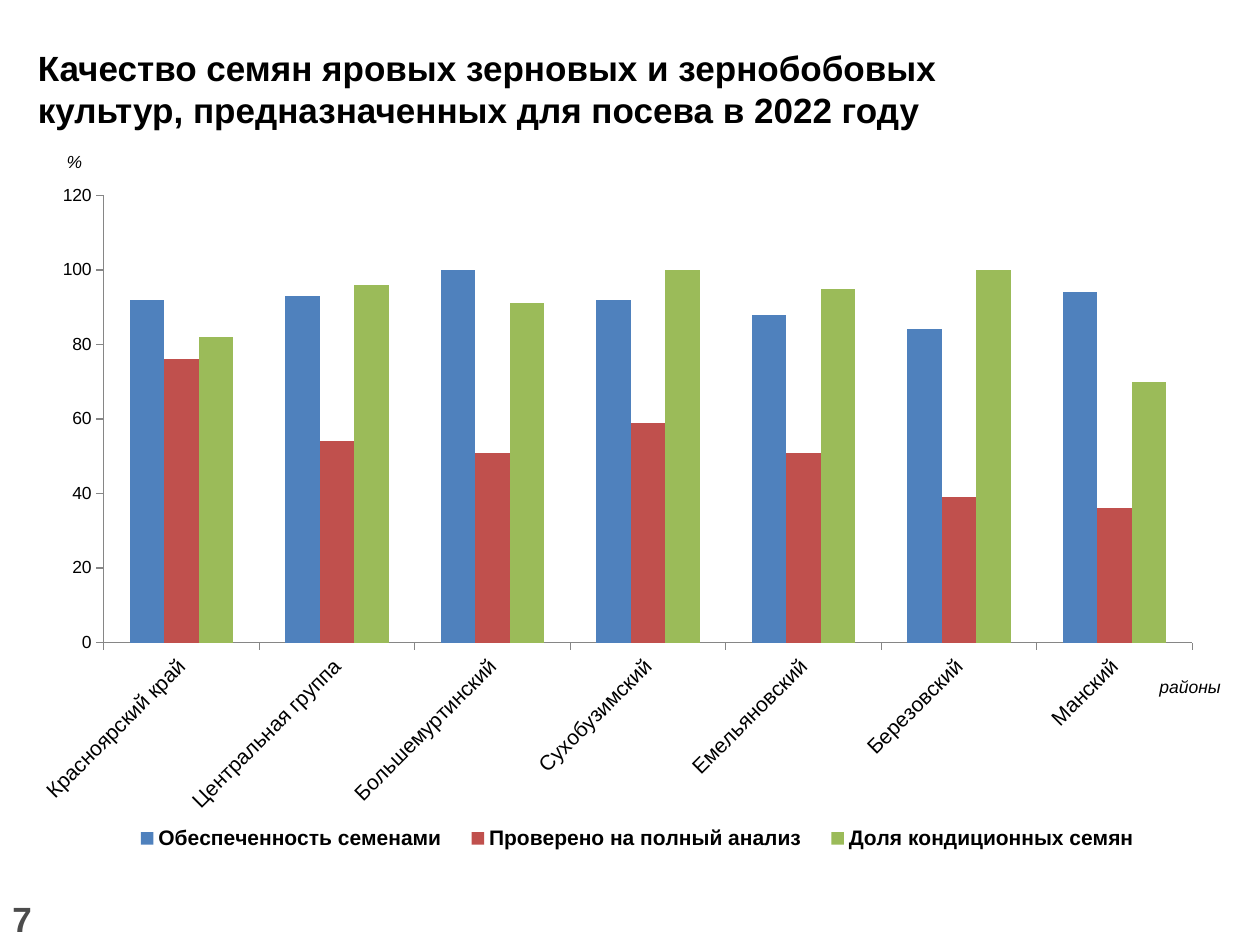
import pptx
import pptx.chart.data
import pptx.dml.color
import pptx.enum.chart
import pptx.enum.text
import pptx.oxml
import pptx.util
from pptx.util import Inches, Pt

RGBColor = pptx.dml.color.RGBColor
BLACK = RGBColor(0x00, 0x00, 0x00)
DARK_GRAY = RGBColor(0x4C, 0x4C, 0x4C)
AXIS_GRAY = RGBColor(0x86, 0x86, 0x86)
BLUE = RGBColor(0x4F, 0x81, 0xBD)
RED = RGBColor(0xC0, 0x50, 0x4D)
GREEN = RGBColor(0x9B, 0xBB, 0x59)
FONT = "Arial"

TITLE = ("Качество семян яровых зерновых и зернобобовых культур, "
         "предназначенных для посева в 2022 году")
DISTRICTS = ["Красноярский край", "Центральная группа", "Большемуртинский",
             "Сухобузимский", "Емельяновский", "Березовский", "Манский"]
SERIES = [
    ("Обеспеченность семенами", [92, 93, 100, 92, 88, 84, 94], BLUE),
    ("Проверено на полный анализ", [76, 54, 51, 59, 51, 39, 36], RED),
    ("Доля кондиционных семян", [82, 96, 91, 100, 95, 100, 70], GREEN),
]
PLOT_AREA = (0.058, 0.027, 0.922, 0.635)
LEGEND_AREA = (0.07, 0.91, 0.88, 0.06)

ALIGN = pptx.enum.text.PP_ALIGN
ANCHOR = pptx.enum.text.MSO_ANCHOR


def style_font(font, size, color=BLACK, bold=False, italic=False):
    font.name, font.size = FONT, Pt(size)
    font.bold, font.italic = bold, italic
    font.color.rgb = color


def write(shape, text, size, align=ALIGN.LEFT, anchor=ANCHOR.TOP, **style):
    frame = shape.text_frame
    frame.word_wrap = True
    frame.auto_size = pptx.enum.text.MSO_AUTO_SIZE.NONE
    frame.vertical_anchor = anchor
    frame.text = text
    paragraph = frame.paragraphs[0]
    paragraph.alignment = align
    paragraph.line_spacing = 1.0
    style_font(paragraph.font, size, **style)


def add_label(slide, area, text, size, **style):
    box = slide.shapes.add_textbox(*map(Inches, area))
    write(box, text, size, **style)


def manual_layout(area, inner=False):
    """Return a c:layout element holding fractions of the chart area."""
    target = '<c:layoutTarget val="inner"/>' if inner else ""
    modes = '<c:xMode val="edge"/><c:yMode val="edge"/>'
    sizes = "".join(f'<c:{key} val="{value}"/>' for key, value in zip("xywh", area))
    return pptx.oxml.parse_xml(
        '<c:layout xmlns:c="http://schemas.openxmlformats.org/drawingml/2006/chart">'
        f"<c:manualLayout>{target}{modes}{sizes}</c:manualLayout></c:layout>")


def set_layout(element, layout, index):
    for old in element.findall(layout.tag):
        element.remove(old)
    element.insert(index, layout)


def add_seed_chart(slide):
    data = pptx.chart.data.CategoryChartData()
    data.categories = DISTRICTS
    for name, values, _ in SERIES:
        data.add_series(name, values)
    chart = slide.shapes.add_chart(
        pptx.enum.chart.XL_CHART_TYPE.COLUMN_CLUSTERED,
        *map(Inches, (0.28, 1.4, 9.37, 5.59)), data).chart
    style_font(chart.font, 10)
    chart.has_title = False

    plot = chart.plots[0]
    plot.gap_width, plot.overlap = 150, 0
    plot.vary_by_categories = False
    for series, (_, _, color) in zip(plot.series, SERIES):
        series.format.fill.solid()
        series.format.fill.fore_color.rgb = color

    for axis, size in ((chart.category_axis, 12), (chart.value_axis, 10)):
        axis.has_major_gridlines = False
        axis.major_tick_mark = pptx.enum.chart.XL_TICK_MARK.OUTSIDE
        axis.minor_tick_mark = pptx.enum.chart.XL_TICK_MARK.NONE
        axis.format.line.color.rgb = AXIS_GRAY
        axis.format.line.width = Pt(0.75)
        style_font(axis.tick_labels.font, size)
    labels = chart.category_axis._element.find(".//{*}txPr/{*}bodyPr")
    labels.set("rot", str(-45 * 60000))
    labels.set("vert", "horz")
    chart.value_axis.minimum_scale = 0
    chart.value_axis.maximum_scale = 120
    chart.value_axis.major_unit = 20

    chart.has_legend = True
    legend = chart.legend
    legend.position = pptx.enum.chart.XL_LEGEND_POSITION.BOTTOM
    legend.include_in_layout = False
    style_font(legend.font, 12, bold=True)
    set_layout(legend._element, manual_layout(LEGEND_AREA), 1)
    plot_area = chart._chartSpace.find(".//{*}plotArea")
    set_layout(plot_area, manual_layout(PLOT_AREA, inner=True), 0)


def main():
    deck = pptx.Presentation()
    deck.slide_width, deck.slide_height = Inches(10), Inches(7.5)
    slide = deck.slides.add_slide(deck.slide_layouts.get_by_name("Title Only"))

    title = slide.shapes.title
    title.left, title.top, title.width, title.height = map(
        Inches, (0.2, 0.29, 7.81, 0.82))
    write(title, TITLE, 20, anchor=ANCHOR.MIDDLE, bold=True)

    add_label(slide, (0.43, 1.15, 0.47, 0.27), "%", 10, italic=True)
    add_label(slide, (9.09, 5.32, 0.71, 0.27), "районы", 10,
              align=ALIGN.CENTER, italic=True)
    add_seed_chart(slide)
    add_label(slide, (0, 7.17, 0.59, 0.24), "7", 20, anchor=ANCHOR.MIDDLE,
              color=DARK_GRAY, bold=True)
    deck.save("out.pptx")


if __name__ == "__main__":
    main()
